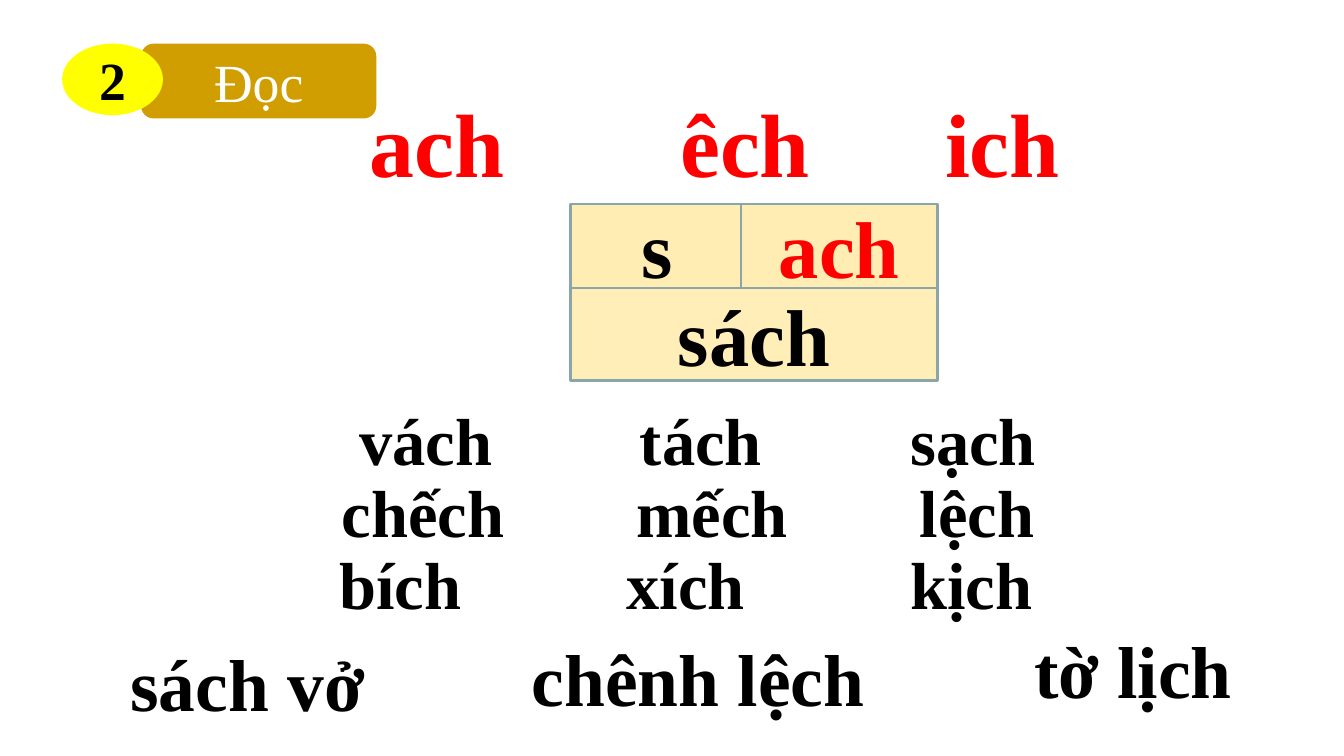
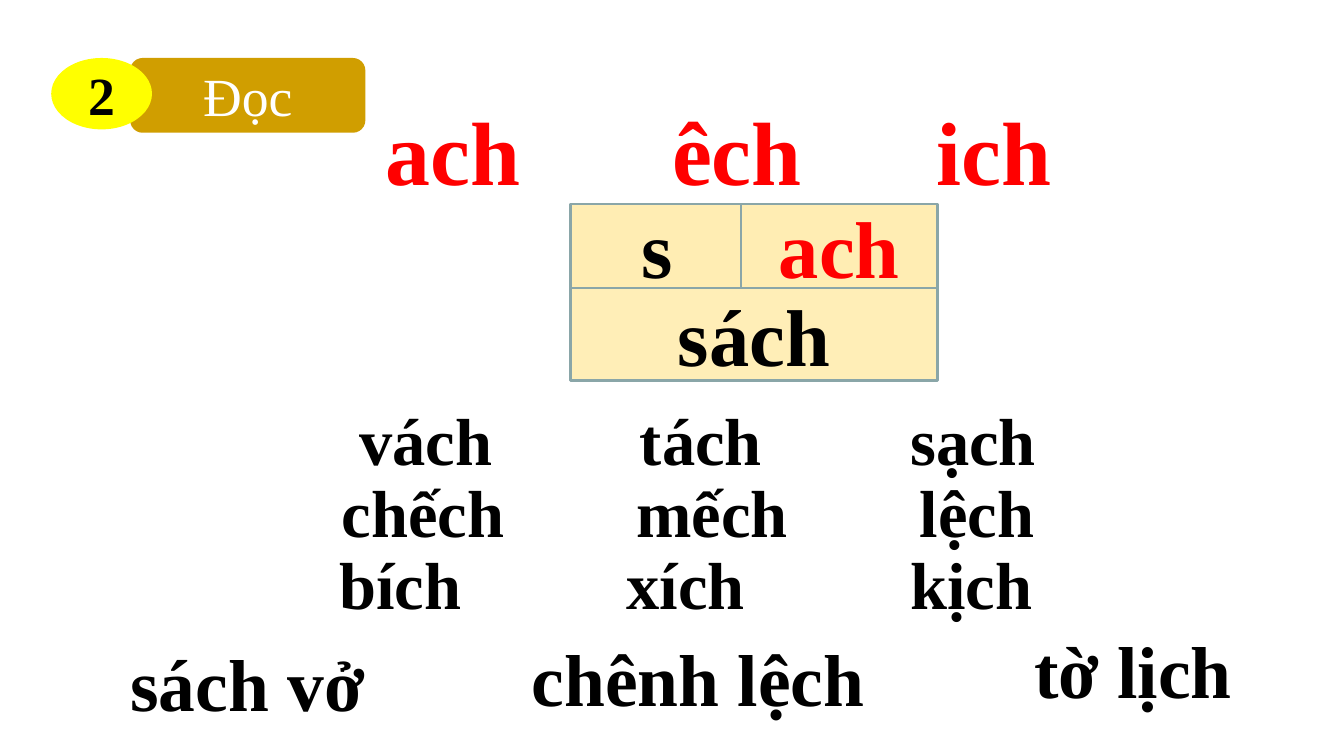
from dataclasses import dataclass

from lxml.etree import SubElement
from pptx import Presentation
from pptx.dml.color import RGBColor
from pptx.enum.shapes import MSO_SHAPE
from pptx.enum.text import MSO_ANCHOR, MSO_AUTO_SIZE, PP_ALIGN
from pptx.oxml.ns import qn
from pptx.slide import Slide
from pptx.text.text import TextFrame
from pptx.util import Inches, Pt

FONT = "Times New Roman"
BLACK = RGBColor(0, 0, 0)
WHITE = RGBColor(255, 255, 255)
RED = RGBColor(255, 0, 0)
YELLOW = RGBColor(255, 255, 0)
GOLD = RGBColor(0xD0, 0x9E, 0x00)
CREAM = RGBColor(0xFF, 0xED, 0xB3)
LIGHT_CREAM = RGBColor(0xFF, 0xEE, 0xB7)
GREY_BLUE = RGBColor(0x8A, 0xA6, 0xA8)


@dataclass(frozen=True)
class Box:
    left: float
    top: float
    width: float
    height: float

    def lengths(self) -> list[int]:
        return [Inches(value) for value in (self.left, self.top, self.width, self.height)]


@dataclass(frozen=True)
class Panel:
    text: str
    box: Box
    fill: RGBColor
    color: RGBColor = BLACK
    size: int = 69
    bold: bool = True
    outline: RGBColor | None = GREY_BLUE
    kind: MSO_SHAPE = MSO_SHAPE.RECTANGLE


@dataclass(frozen=True)
class TextLine:
    text: str
    box: Box
    size: int
    color: RGBColor = BLACK
    margin: float = 0.14
    word_starts: tuple[float, ...] = ()


@dataclass(frozen=True)
class Lesson:
    label_left: float
    label_top: float
    heading_box: Box
    heading_starts: tuple[float, ...]


LESSONS = [
    Lesson(0.74, 0.52, Box(4.01, 0.97, 10.78, 1.44), (4.4, 8.1, 11.25)),
    Lesson(0.61, 0.69, Box(3.67, 1.07, 10.78, 1.44), (4.59, 8, 11.15)),
]

SYLLABLE_PANELS = [
    Panel("s", Box(6.79, 2.43, 2.06, 1), CREAM),
    Panel("ach", Box(8.82, 2.43, 2.34, 1), CREAM, RED),
    Panel("sách", Box(6.79, 3.43, 4.37, 1.1), LIGHT_CREAM),
]

READING_LINES = [
    TextLine("vách\ttách\tsạch", Box(4.18, 4.7, 9.58, 1.06), 57,
             margin=0.1, word_starts=(7.62, 10.84)),
    TextLine("chếch\tmếch\tlệch", Box(3.97, 5.56, 9.79, 1.06), 57,
             margin=0.1, word_starts=(7.58, 10.95)),
    TextLine("\tbích\txích\tkịch", Box(3.73, 6.41, 10.53, 1.06), 57,
             margin=0.1, word_starts=(4.04, 7.46, 10.84)),
    TextLine("sách vở", Box(1.41, 7.52, 4.4, 1.2), 63),
    TextLine("chênh lệch", Box(6.19, 7.47, 4.91, 1.2), 63),
    TextLine("tờ lịch", Box(12.17, 7.37, 3.56, 1.2), 63),
]


def write_text(frame: TextFrame, text: str, size: int, color: RGBColor,
               bold: bool = True, margin: float = 0.14) -> None:
    frame.word_wrap = True
    frame.margin_left = frame.margin_right = Inches(margin)
    frame.margin_top = frame.margin_bottom = Inches(margin / 2)
    frame.text = text
    for run in frame.paragraphs[0].runs:
        run.font.name = FONT
        run.font.size = Pt(size)
        run.font.bold = bold
        run.font.color.rgb = color


def draw_panel(slide: Slide, panel: Panel) -> None:
    shape = slide.shapes.add_shape(panel.kind, *panel.box.lengths())
    shape.shadow.inherit = False
    shape.fill.solid()
    shape.fill.fore_color.rgb = panel.fill
    if panel.outline is None:
        shape.line.fill.background()
    else:
        shape.line.color.rgb = panel.outline
        shape.line.width = Pt(2)
    write_text(shape.text_frame, panel.text, panel.size, panel.color, panel.bold)
    shape.text_frame.vertical_anchor = MSO_ANCHOR.MIDDLE
    shape.text_frame.paragraphs[0].alignment = PP_ALIGN.CENTER


def draw_line(slide: Slide, line: TextLine) -> None:
    frame = slide.shapes.add_textbox(*line.box.lengths()).text_frame
    write_text(frame, line.text, line.size, line.color, margin=line.margin)
    frame.auto_size = MSO_AUTO_SIZE.SHAPE_TO_FIT_TEXT
    if line.word_starts:
        properties = frame.paragraphs[0]._p.get_or_add_pPr()
        tab_list = SubElement(properties, qn("a:tabLst"))
        for start in line.word_starts:
            position = Inches(start - line.box.left - line.margin)
            SubElement(tab_list, qn("a:tab"), pos=str(position), algn="l")


def draw_label(slide: Slide, left: float, top: float) -> None:
    draw_panel(slide, Panel("Đọc", Box(left + 0.94, top, 2.8, 0.89), GOLD, WHITE, 46,
                            False, None, MSO_SHAPE.ROUNDED_RECTANGLE))
    draw_panel(slide, Panel("2", Box(left, top, 1.2, 0.85), YELLOW, BLACK, 46,
                            True, None, MSO_SHAPE.OVAL))


def draw_lesson(slide: Slide, lesson: Lesson) -> None:
    draw_label(slide, lesson.label_left, lesson.label_top)
    draw_line(slide, TextLine("\tach\têch\tich", lesson.heading_box, 77, RED,
                              word_starts=lesson.heading_starts))
    for panel in SYLLABLE_PANELS:
        draw_panel(slide, panel)
    for line in READING_LINES:
        draw_line(slide, line)


def main() -> None:
    presentation = Presentation()
    presentation.slide_width = Inches(16)
    presentation.slide_height = Inches(9)
    blank_layout = presentation.slide_layouts[6]
    for lesson in LESSONS:
        draw_lesson(presentation.slides.add_slide(blank_layout), lesson)
    presentation.save("out.pptx")


if __name__ == "__main__":
    main()
